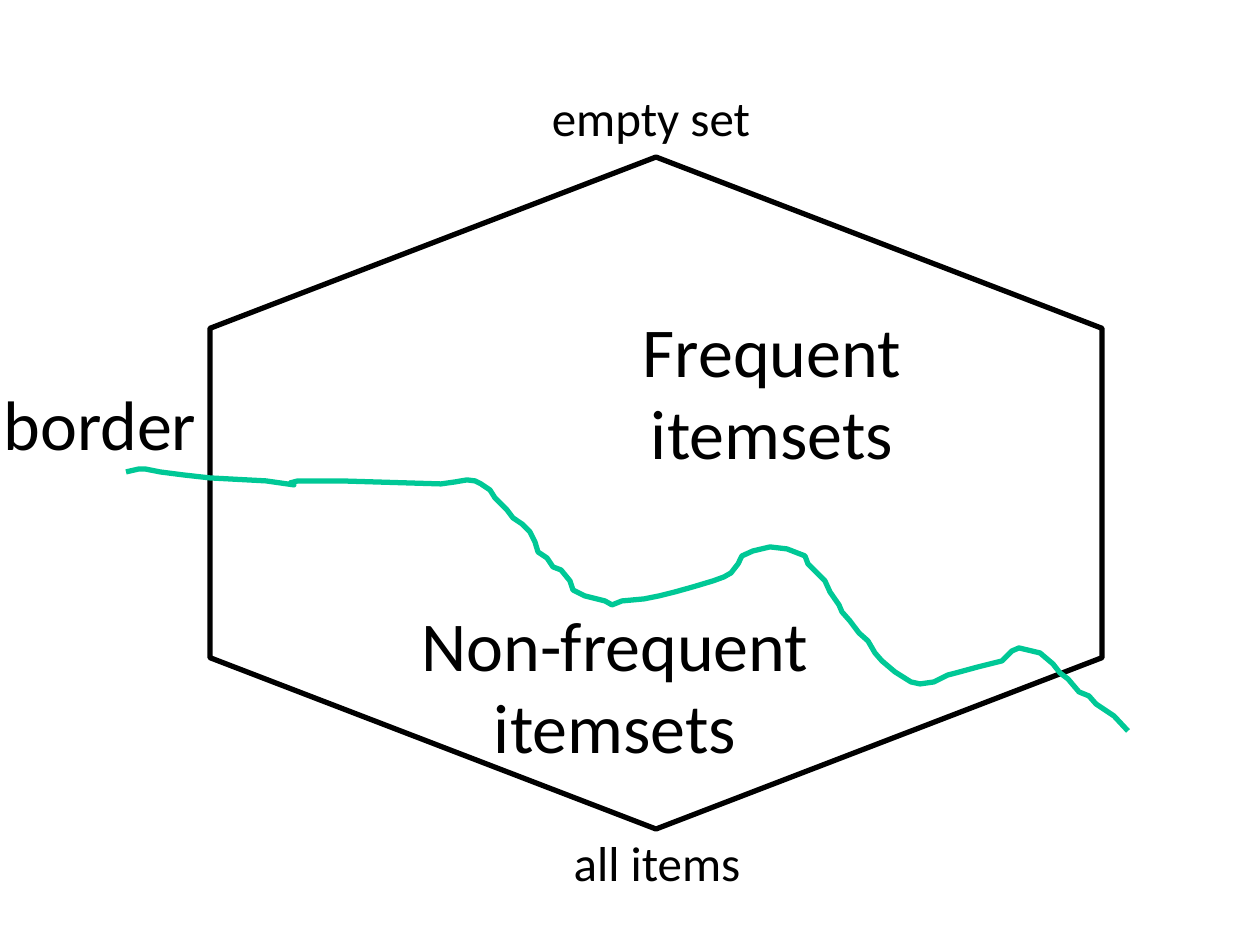
import dataclasses

import pptx
import pptx.dml.color
import pptx.enum.shapes
import pptx.enum.text
import pptx.util

SCALE = 914400 / 126  # EMU per px


@dataclasses.dataclass(frozen=True)
class Theme:
    font: str = "Calibri"
    ink: str = "000000"
    green: str = "00C896"
    small: int = 28
    large: int = 40
    stroke: int = 3
    leading: float = 0.98


THEME = Theme()

# left, top, width, height, type size, wording
LABELS = [
    (536, 829, 242, 72, THEME.small, "all items"),
    (525, 84, 252, 72, THEME.small, "empty set"),
    (525, 305, 494, 183, THEME.large, "Frequent itemsets"),
    (368, 599, 494, 183, THEME.large, "Non-frequent itemsets"),
    (-147, 378, 494, 97, THEME.large, "border"),
]

BORDER = [
    (126, 472), (139, 469), (145, 469), (160, 472), (183, 475), (210, 478),
    (266, 481), (294, 485), (290, 483), (298, 481), (340, 481), (441, 484),
    (455, 482), (467, 480), (475, 481), (481, 484), (490, 490), (495, 498),
    (507, 510), (513, 518), (522, 524), (530, 532), (535, 542), (538, 552),
    (547, 558), (553, 567), (561, 570), (570, 581), (573, 590), (585, 596),
    (605, 601), (612, 605), (622, 601), (644, 599), (659, 596), (675, 592),
    (693, 587), (713, 581), (724, 577), (731, 573), (738, 564), (742, 556),
    (753, 551), (770, 547), (787, 549), (805, 556), (808, 564), (825, 581),
    (830, 592), (839, 605), (842, 612), (850, 621), (859, 633), (868, 641),
    (875, 653), (882, 661), (895, 672), (911, 682), (920, 684), (934, 682),
    (948, 675), (956, 673), (978, 667), (1002, 661), (1012, 651), (1019, 648),
    (1040, 653), (1053, 664), (1060, 673), (1068, 679), (1079, 692),
    (1089, 696), (1096, 704), (1114, 716), (1128, 731),
]


def px(count):
    return pptx.util.Emu(round(count * SCALE))


def color(code):
    return pptx.dml.color.RGBColor.from_string(code)


def outline(shape, code):
    """Leave only a plain stroke on the shape."""
    shape.shadow.inherit = False
    shape.fill.background()
    shape.line.color.rgb = color(code)
    shape.line.width = pptx.util.Pt(THEME.stroke)


def add_lattice(slide):
    """Draw the itemset lattice as a hexagon turned onto its point."""
    kind = pptx.enum.shapes.MSO_SHAPE.HEXAGON
    shape = slide.shapes.add_shape(kind, px(320), px(47), px(672), px(892))
    shape.adjustments[0] = 0.255
    shape.adjustments[1] = 1.155
    shape.rotation = 90
    outline(shape, THEME.ink)


def add_border(slide):
    first, *rest = BORDER
    pen = slide.shapes.build_freeform(*first, scale=SCALE)
    pen.add_line_segments(rest, close=False)
    outline(pen.convert_to_shape(), THEME.green)


def add_label(slide, left, top, width, height, size, text):
    box = slide.shapes.add_textbox(px(left), px(top), px(width), px(height))
    frame = box.text_frame
    frame.word_wrap = True
    frame.auto_size = pptx.enum.text.MSO_AUTO_SIZE.SHAPE_TO_FIT_TEXT
    line = frame.paragraphs[0]
    line.text = text
    line.alignment = pptx.enum.text.PP_ALIGN.CENTER
    line.line_spacing = THEME.leading
    line.font.name = THEME.font
    line.font.size = pptx.util.Pt(size)
    line.font.color.rgb = color(THEME.ink)


def main():
    deck = pptx.Presentation()
    deck.slide_width, deck.slide_height = px(1260), px(945)
    slide = deck.slides.add_slide(deck.slide_layouts[6])
    add_lattice(slide)
    add_border(slide)
    for label in LABELS:
        add_label(slide, *label)
    deck.save("out.pptx")


if __name__ == "__main__":
    main()
